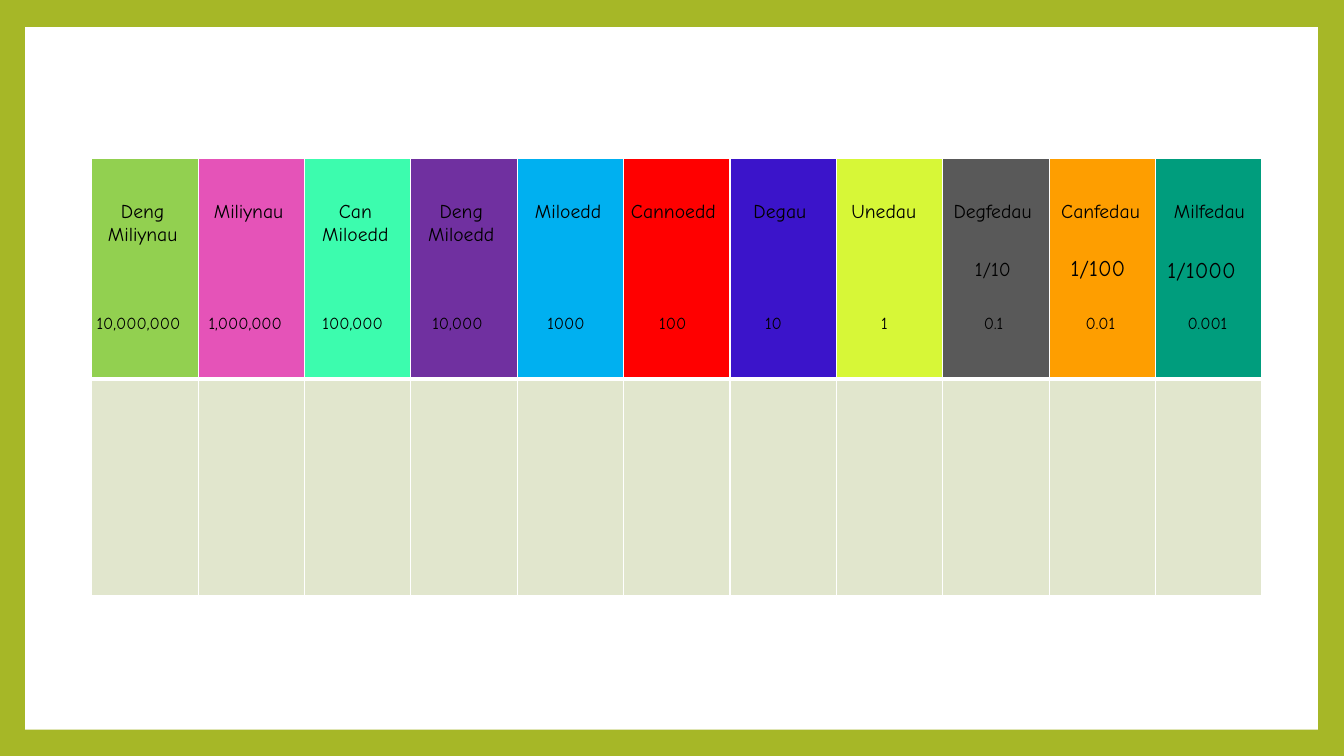
from lxml import etree
from pptx import Presentation
from pptx.dml.color import RGBColor
from pptx.enum.shapes import MSO_SHAPE
from pptx.enum.text import MSO_AUTO_SIZE, PP_ALIGN
from pptx.oxml.ns import qn
from pptx.util import Inches, Pt

RECT = MSO_SHAPE.RECTANGLE
GROW = MSO_AUTO_SIZE.SHAPE_TO_FIT_TEXT
LEFT, CENTER = PP_ALIGN.LEFT, PP_ALIGN.CENTER

BLACK = RGBColor(0x00, 0x00, 0x00)
WHITE = RGBColor(0xFF, 0xFF, 0xFF)
OLIVE = RGBColor(0xA6, 0xB7, 0x27)
PALE = RGBColor(0xE1, 0xE6, 0xCD)
LIME = RGBColor(0x92, 0xD0, 0x50)
PINK = RGBColor(0xE5, 0x53, 0xB8)
MINT = RGBColor(0x3C, 0xFC, 0xAE)
PURPLE = RGBColor(0x70, 0x30, 0xA0)
SKY = RGBColor(0x00, 0xB0, 0xF0)
RED = RGBColor(0xFF, 0x00, 0x00)
INDIGO = RGBColor(0x3B, 0x14, 0xCA)
YELLOW = RGBColor(0xD7, 0xF7, 0x37)
GREY = RGBColor(0x59, 0x59, 0x59)
ORANGE = RGBColor(0xFE, 0x9E, 0x00)
TEAL = RGBColor(0x00, 0x9D, 0x7D)

# fill, name, name left, name width, value, value left
PLACES = [
    (LIME, "Deng\nMiliynau", 0.89, 1.05, "10,000,000", 0.86),
    (PINK, "Miliynau", 1.94, 1.05, "1,000,000", 1.97),
    (MINT, "Can Miloedd", 3.0, 1.05, "100,000", 3.1),
    (PURPLE, "Deng\nMiloedd", 4.05, 1.05, "10,000", 4.19),
    (SKY, "Miloedd", 5.11, 1.05, "1000", 5.33),
    (RED, "Cannoedd", 6.08, 1.2, "100", 6.44),
    (INDIGO, "Degau", 7.21, 1.05, "10", 7.49),
    (YELLOW, "Unedau", 8.24, 1.05, "1", 8.64),
    (GREY, "Degfedau", 9.2, 1.29, "0.1", 9.66),
    (ORANGE, "Canfedau", 10.39, 1.05, "0.01", 10.67),
    (TEAL, "Milfedau", 11.47, 1.05, "0.001", 11.68),
]

# text, left, top, width, size
PARTS = [
    ("1/10", 9.57, 2.5, 0.69, 14),
    ("1/100", 10.52, 2.47, 0.79, 16),
    ("1/1000", 11.48, 2.49, 1.31, 16),
]


class Board:
    font = "Comic Neue"
    ink = BLACK

    def __init__(self, slide):
        self.slide = slide

    def back(self, color):
        fill = self.slide.background.fill
        fill.solid()
        fill.fore_color.rgb = color

    def rect(self, x, y, w, h, color):
        box = self.slide.shapes.add_shape(
            RECT, Inches(x), Inches(y), Inches(w), Inches(h))
        box.shadow.inherit = False
        box.fill.solid()
        box.fill.fore_color.rgb = color
        box.line.fill.background()

    def text(self, text, x, y, w, h=0.34, size=14, align=LEFT):
        box = self.slide.shapes.add_textbox(
            Inches(x), Inches(y), Inches(w), Inches(h))
        frame = box.text_frame
        frame.word_wrap = True
        frame.auto_size = GROW
        frame.text = text
        for para in frame.paragraphs:
            para.alignment = align
            font = para.runs[0].font
            font.name, font.size = self.font, Pt(size)
            font.color.rgb = self.ink

    def edge(self, cell, side, width):
        """Draw a white border on one side (L, R, T or B) of a cell."""
        props = cell._tc.get_or_add_tcPr()
        line = etree.SubElement(props, qn(f"a:ln{side}"), w=str(Pt(width)))
        fill = etree.SubElement(line, qn("a:solidFill"))
        etree.SubElement(fill, qn("a:srgbClr"), val=str(WHITE))

    def table(self, x, y, w, heights, fills):
        """Add a table from row heights and one list of fills per row."""
        rows, cols = len(fills), len(fills[0])
        table = self.slide.shapes.add_table(
            rows, cols, Inches(x), Inches(y),
            Inches(w), Inches(sum(heights))).table
        for col in table.columns:
            col.width = Inches(w / cols)
        for r, height in enumerate(heights):
            table.rows[r].height = Inches(height)
            for c, color in enumerate(fills[r]):
                cell = table.cell(r, c)
                thick = "B" if r == 0 else "T"
                for side in "LRTB":
                    self.edge(cell, side, 3 if side == thick else 1)
                cell.fill.solid()
                cell.fill.fore_color.rgb = color


def main():
    deck = Presentation()
    deck.slide_width, deck.slide_height = Inches(13.33), Inches(7.5)
    board = Board(deck.slides.add_slide(deck.slide_layouts[6]))
    board.back(OLIVE)
    board.rect(0.25, 0.27, 12.82, 6.97, WHITE)
    heads = [place[0] for place in PLACES]
    board.table(0.91, 1.57, 11.61, [2.19, 2.15], [heads, [PALE] * len(heads)])
    for _, name, left, width, _, _ in PLACES:
        tall = 0.57 if len(name.split()) > 1 else 0.34
        board.text(name, left, 1.92, width, tall, align=CENTER)
    for *_, value, left in PLACES:
        board.text(value, left, 3.05, 1.47, 0.3, size=12)
    for part, left, top, width, size in PARTS:
        board.text(part, left, top, width, size=size)
    deck.save("out.pptx")


if __name__ == "__main__":
    main()
